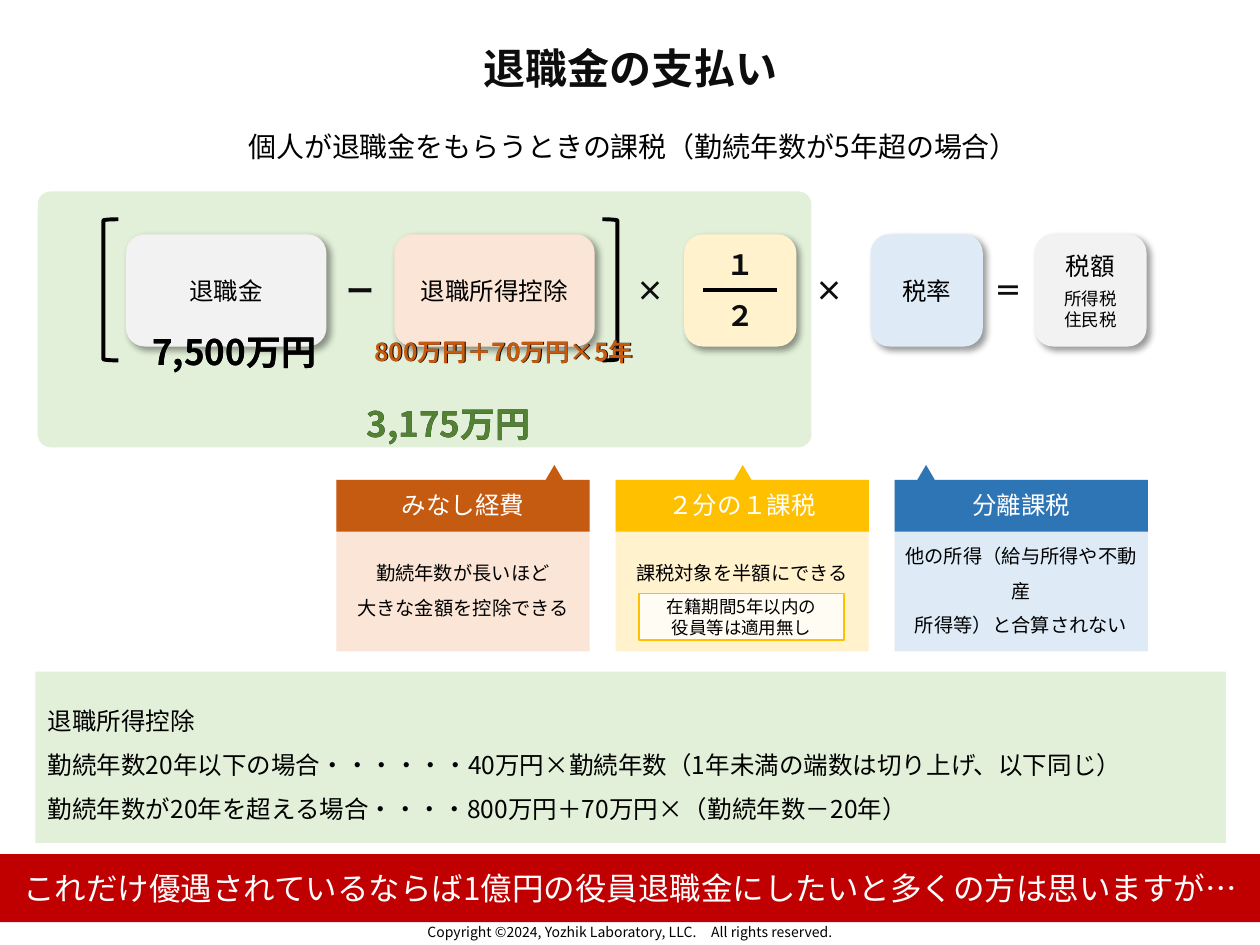
from lxml import etree
from pptx import Presentation, util as u
from pptx.dml.color import RGBColor
from pptx.enum import shapes as s, text as t
from pptx.oxml import parse_xml
from pptx.oxml.ns import nsdecls, qn

FONT = "Noto Sans CJK JP"
INK, BLACK, WHITE = "0D0D0D", "000000", "FFFFFF"
GREEN, GRAY, PEACH, CREAM, SKY = "E2F0D9", "F2F2F2", "FBE5D6", "FFF2CC", "DEEBF7"
RUST, GOLD, BLUE, RED, LEAF = "C55A11", "FFC000", "2E75B6", "C00000", "548235"
RECT, ROUND = s.MSO_SHAPE.RECTANGLE, s.MSO_SHAPE.ROUNDED_RECTANGLE
CENTER = t.PP_ALIGN.CENTER

# Grid: 100 columns by 75 rows of square cells
CELL = u.Inches(0.1)


def cells(*counts):
    return [round(n * CELL) for n in counts]


def color(target, hex_code):
    target.rgb = RGBColor.from_string(hex_code)


def shadow_xml():
    return parse_xml(
        f'<a:effectLst {nsdecls("a")}><a:outerShdw blurRad="50800" dist="38100" '
        'dir="2700000" algn="tl" rotWithShape="0"><a:srgbClr val="000000">'
        '<a:alpha val="40000"/></a:srgbClr></a:outerShdw></a:effectLst>')


def paint(shape, fill=None, line=None, width=1):
    shape.shadow.inherit = False
    if fill:
        shape.fill.solid()
        color(shape.fill.fore_color, fill)
    else:
        shape.fill.background()
    if line:
        color(shape.line.color, line)
        shape.line.width = u.Pt(width)
    else:
        shape.line.fill.background()


def write(shape, lines, size=14, ink=BLACK, bold=False, align=CENTER,
          spacing=1, inset=(1, 0.5, 1, 0.5), anchor=t.MSO_ANCHOR.MIDDLE):
    """Each line is a text, or (text, size, space before)."""
    frame = shape.text_frame
    left, top, right, bottom = cells(*inset)
    frame_format = dict(word_wrap=True, vertical_anchor=anchor, margin_left=left,
                        margin_top=top, margin_right=right, margin_bottom=bottom)
    for name, value in frame_format.items():
        setattr(frame, name, value)
    for i, line in enumerate(lines):
        words, points, before = line if isinstance(line, tuple) else (line, size, 0)
        paragraph = frame.add_paragraph() if i else frame.paragraphs[0]
        paragraph.alignment, paragraph.line_spacing = align, spacing
        if before:
            paragraph.space_before = u.Pt(before)
        run = paragraph.add_run()
        run.text = words
        for name, value in dict(size=u.Pt(points), bold=bold, name=FONT).items():
            setattr(run.font, name, value)
        color(run.font.color, ink)
        latin = run.font._element.find(qn("a:latin"))
        east_asian = etree.Element(qn("a:ea"), typeface=FONT)
        latin.addnext(east_asian)


def block(slide, area, fill=None, lines=(), kind=RECT, line=None, width=1, **style):
    shape = slide.shapes.add_shape(kind, *cells(*area))
    paint(shape, fill, line, width)
    if lines:
        write(shape, lines, **style)
    return shape


def label(slide, area, lines, **style):
    box = slide.shapes.add_textbox(*cells(*area))
    write(box, lines, **style)
    return box


def term(slide, left, width, fill, lines=()):
    """Shadowed rounded card of the formula."""
    card = block(slide, (left, 18.6, width, 8.9), fill, lines, ROUND)
    effects = card._element.spPr.find(qn("a:effectLst"))
    effects.getparent().replace(effects, shadow_xml())


def sign(slide, left, top, mark):
    label(slide, (left, top, 4.1, 4.1), [mark], size=16, ink=INK, bold=True,
          inset=(0, 0, 0, 0))


def amount(slide, back, front, words, size, ink):
    """Coloured sum over a white-edged, shadowed one."""
    for area, tone in ((back, BLACK), (front, ink)):
        box = label(slide, area, [words], size=size, ink=tone, bold=True,
                    spacing=1.5, anchor=t.MSO_ANCHOR.TOP)
        box.text_frame.auto_size = t.MSO_AUTO_SIZE.SHAPE_TO_FIT_TEXT
        if area is back:
            props = box.text_frame.paragraphs[0].runs[0].font._element
            props.find(qn("a:solidFill")).addnext(shadow_xml())
            props.insert(0, parse_xml(
                f'<a:ln {nsdecls("a")} w="76200"><a:solidFill>'
                f'<a:srgbClr val="{WHITE}"/></a:solidFill></a:ln>'))


def merit(slide, left, tip, heading, strong, pale, lines, bottom=0.5):
    """Explanation with a heading that points up at the formula."""
    width, top, base = 20.1, 38.1, 42.2
    block(slide, (left, top, width, 13.6), pale, lines, size=11, spacing=1.5,
          inset=(0.3, 3.5, 0.3, bottom))
    peak = left + tip
    right = left + width
    outline = [(peak + 0.7, top), (right, top), (right, base), (left, base),
               (left, top), (peak - 0.7, top)]
    builder = slide.shapes.build_freeform(*cells(peak, 36.9))
    builder.add_line_segments([cells(*point) for point in outline], close=True)
    header = builder.convert_to_shape()
    paint(header, strong)
    write(header, [heading], ink=WHITE, inset=(1, 1.5, 1, 0.5))


def formula(slide):
    term(slide, 10, 15.9, GRAY, ["退職金"])
    term(slide, 31.3, 15.9, PEACH, ["退職所得控除"])
    term(slide, 54.3, 8.9, CREAM)
    term(slide, 69.1, 8.9, SKY, ["税率"])
    term(slide, 82.1, 8.9, GRAY, ["税額", ("所得税", 10, 4), ("住民税", 10, 0)])
    for left, kind in ((8.2, s.MSO_SHAPE.LEFT_BRACKET), (47.8, s.MSO_SHAPE.RIGHT_BRACKET)):
        block(slide, (left, 17.4, 1.2, 11.2), kind=kind, line=BLACK, width=2.25)
    for left, mark in ((26.6, "ー"), (49.6, "×"), (63.8, "×"), (78, "＝")):
        sign(slide, left, 21, mark)
    # One half
    bar = slide.shapes.add_connector(s.MSO_CONNECTOR.STRAIGHT, *cells(55.8, 23, 61.7, 23))
    color(bar.line.color, BLACK)
    bar.line.width = u.Pt(2.25)
    etree.SubElement(bar._element.spPr, qn("a:effectLst"))
    sign(slide, 56.7, 23, "２")
    sign(slide, 56.7, 18.9, "１")


def main():
    deck = Presentation()
    deck.slide_width, deck.slide_height = cells(100, 75)
    slide = deck.slides.add_slide(deck.slide_layouts[6])

    # Footer and panels
    label(slide, (18.1, 73, 63.8, 2),
          ["Copyright ©2024, Yozhik Laboratory, LLC.　All rights reserved."],
          size=8, inset=(0, 0, 0, 0))
    panel = block(slide, (3, 15.2, 61.4, 20.3), GREEN, kind=ROUND)
    panel.adjustments[0] = 0.05
    block(slide, (2.8, 53.3, 94.5, 13.6), GREEN,
          ["退職所得控除",
           "勤続年数20年以下の場合・・・・・・40万円×勤続年数（1年未満の端数は切り上げ、以下同じ）",
           "勤続年数が20年を超える場合・・・・800万円＋70万円×（勤続年数－20年）"],
          align=t.PP_ALIGN.LEFT, spacing=1.5)
    label(slide, (3, 9.8, 94.5, 4),
          ["個人が退職金をもらうときの課税（勤続年数が5年超の場合）"], size=16, spacing=0.9)

    formula(slide)

    # Sums under the formula
    pay, taxable = (10.1, 24.1, 17, 5.2), (27.1, 29.8, 17, 5.2)
    amount(slide, pay, pay, "7,500万円", 20, BLACK)
    amount(slide, (25.6, 25.1, 28.9, 3.9), (26.2, 25.1, 27.6, 7.5),
           "800万円＋70万円×5年", 14, RUST)
    amount(slide, taxable, taxable, "3,175万円", 20, LEAF)

    # Three tax advantages at equal steps
    merits = [
        (17.3, "みなし経費", RUST, PEACH, ["勤続年数が長いほど", "大きな金額を控除できる"]),
        (10.1, "２分の１課税", GOLD, CREAM, ["課税対象を半額にできる"], 3.3),
        (2.5, "分離課税", BLUE, SKY, ["他の所得（給与所得や不動産", "所得等）と合算されない"]),
    ]
    for i, parts in enumerate(merits):
        merit(slide, 26.7 + 22.15 * i, *parts)
    exception = block(slide, (50.7, 47.1, 16.3, 3.7), WHITE,
                      ["在籍期間5年以内の", "役員等は適用無し"], line=GOLD, size=10)
    tint = exception._element.spPr.find(qn("a:solidFill"))[0]
    etree.SubElement(tint, qn("a:alpha"), val="80000")

    # Title and closing message
    label(slide, (2.8, 3.3, 94.5, 4.1), ["退職金の支払い"], size=24, ink=INK, bold=True)
    block(slide, (0, 67.8, 100, 5.4), RED,
          ["これだけ優遇されているならば1億円の役員退職金にしたいと多くの方は思いますが…"],
          size=18, ink=WHITE)
    deck.save("out.pptx")


if __name__ == "__main__":
    main()
